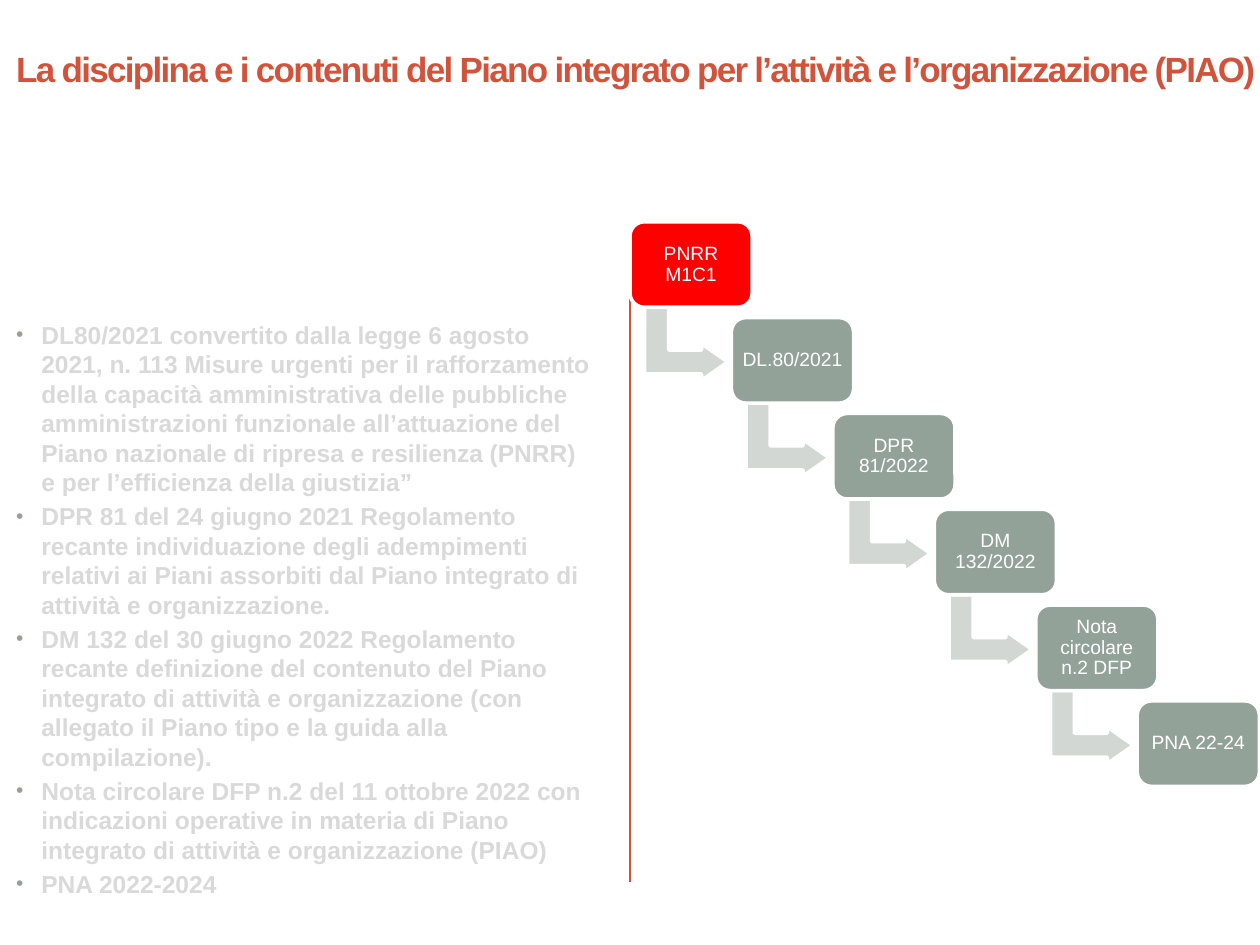
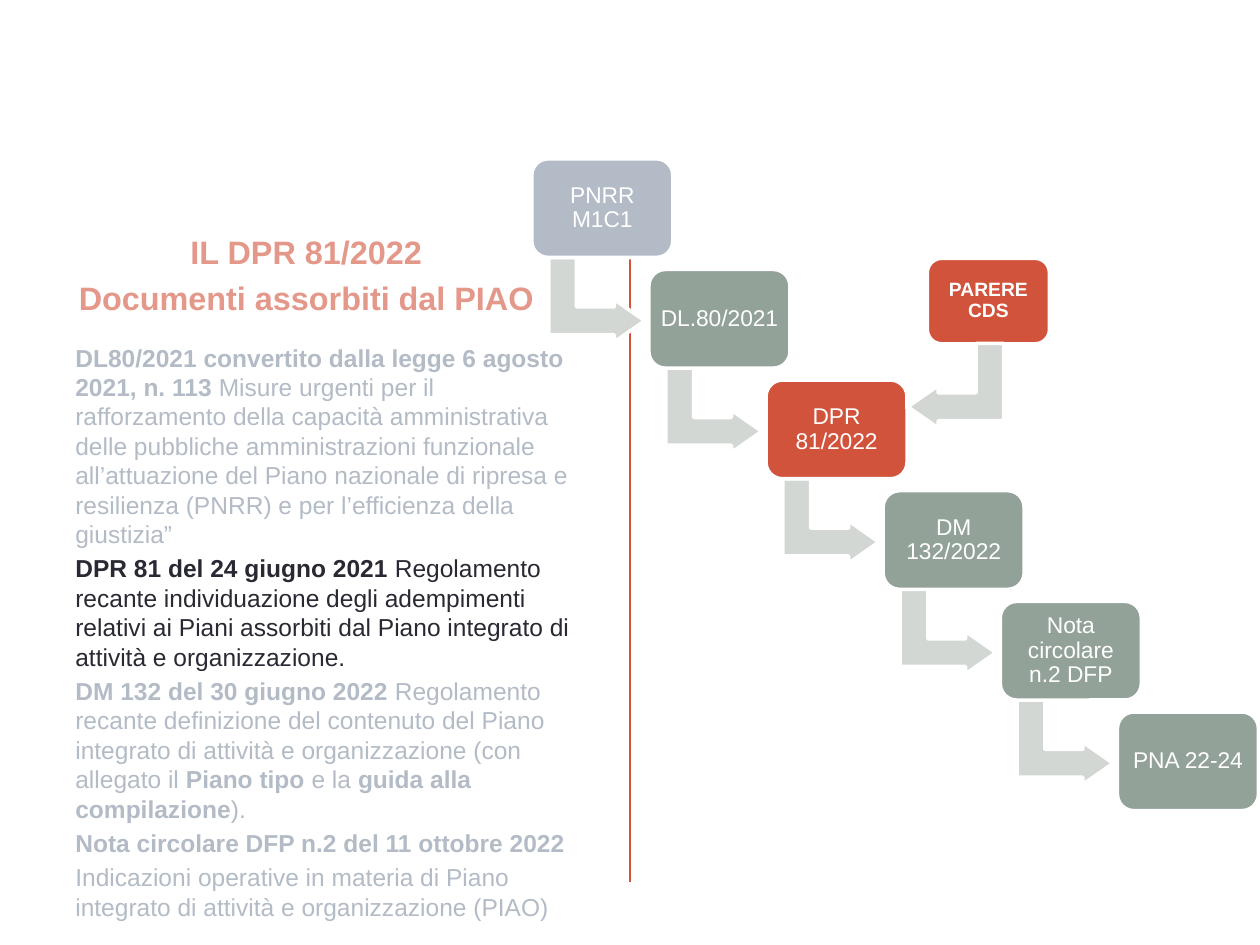
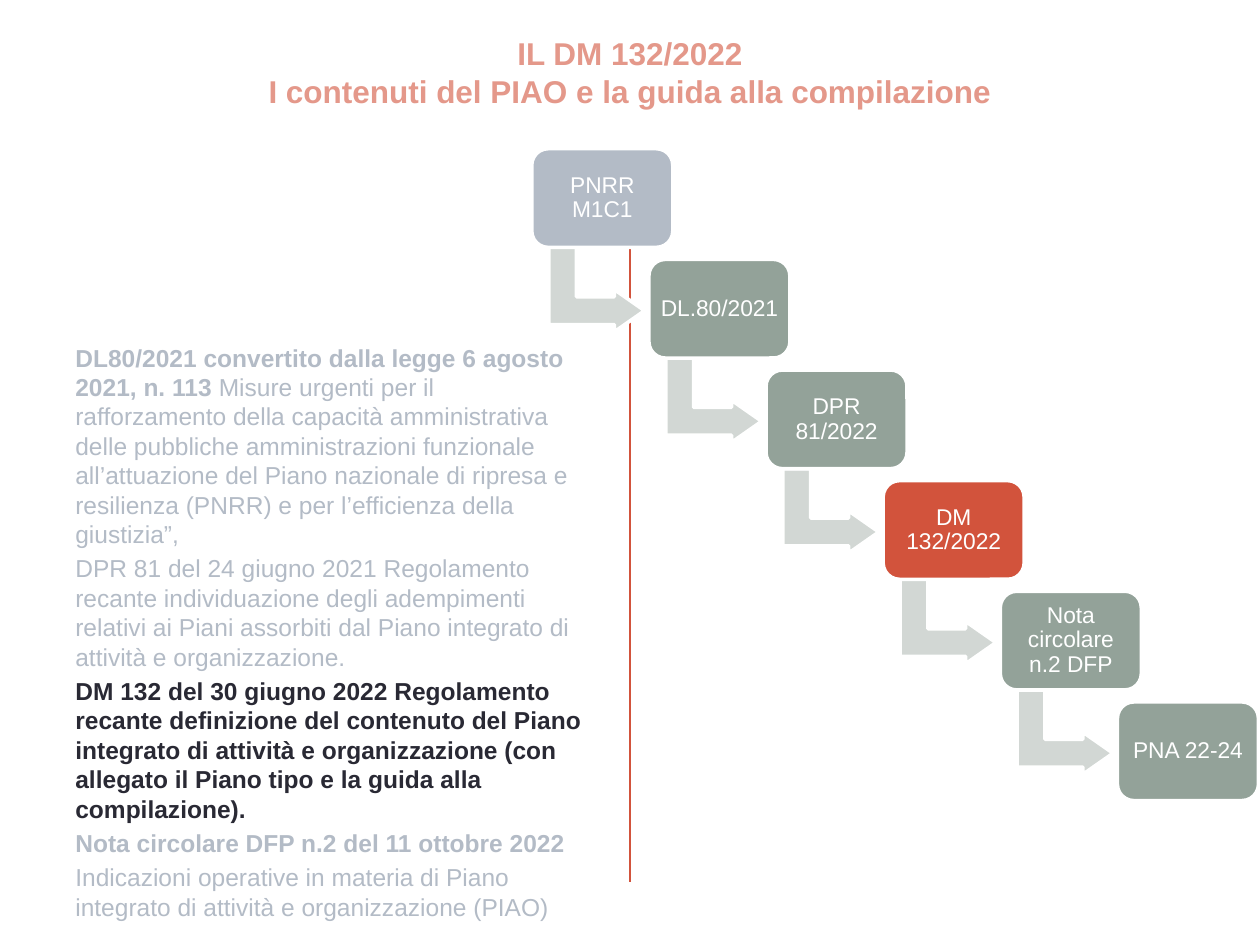
import pptx
import pptx.util
import pptx.dml.color
import pptx.enum.shapes
import pptx.enum.text
import pptx.oxml.ns
import lxml.etree

# ---------- Shared style ----------
WIDTH, HEIGHT = 10, 7.5
FONT = "Arial"
RED, SAGE, PALE_SAGE = "D2533C", "93A299", "D2D7D4"
BRIGHT_RED, SALMON = "FF0000", "E4988A"
BLUE_GREY, LIGHT_GREY, INK, WHITE = "B3BBC6", "D9D9D9", "292934", "FFFFFF"
SHAPES = pptx.enum.shapes.MSO_SHAPE
CENTER = pptx.enum.text.PP_ALIGN.CENTER
LEFT = pptx.enum.text.PP_ALIGN.LEFT
TOP = pptx.enum.text.MSO_ANCHOR.TOP
MIDDLE = pptx.enum.text.MSO_ANCHOR.MIDDLE

# ---------- Content: **...** marks bold ----------
STEPS = ["PNRR M1C1", "DL.80/2021", "DPR 81/2022", "DM 132/2022",
         "Nota circolare n.2 DFP", "PNA 22-24"]

DL_NAME = "DL80/2021 convertito dalla legge 6 agosto 2021, n. 113"
DL_SUBJECT = ("Misure urgenti per il rafforzamento della capacità amministrativa delle "
              "pubbliche amministrazioni funzionale all’attuazione del Piano nazionale di "
              "ripresa e resilienza (PNRR) e per l’efficienza della giustizia”")
DPR_NAME = "DPR 81 del 24 giugno 2021"
DPR_SUBJECT = ("Regolamento recante individuazione degli adempimenti relativi ai Piani "
               "assorbiti dal Piano integrato di attività e organizzazione.")
DM_NAME = "DM 132 del 30 giugno 2022"
DM_SUBJECT = ("Regolamento recante definizione del contenuto del Piano integrato di "
              "attività e organizzazione (con allegato il ")
NOTE_NAME = "Nota circolare DFP n.2 del 11 ottobre 2022"
NOTE_SUBJECT = "ndicazioni operative in materia di Piano integrato di attività e organizzazione (PIAO)"
DM_PLAIN = f"{DM_NAME} {DM_SUBJECT}Piano tipo e la guida alla compilazione)."

OVERVIEW = [f"**{text}**" for text in (
    f"{DL_NAME} {DL_SUBJECT}",
    f"{DPR_NAME} {DPR_SUBJECT}",
    DM_PLAIN,
    f"{NOTE_NAME} con i{NOTE_SUBJECT}",
    "PNA 2022-2024",
)]
NOTE_LINES = [f"**{NOTE_NAME}**", f"I{NOTE_SUBJECT}"]

SLIDES = [
    {"title": ["**La disciplina e i contenuti del Piano integrato per l’attività "
               "e l’organizzazione (PIAO)**"],
     "title_box": (0.03, 0, 10.2, 1.08),
     "title_format": dict(size=20, color=RED, align=LEFT, spacing=-1),
     "laws": OVERVIEW, "law_box": (0.03, 2.49, 4.78, 4.32),
     "law_format": dict(color=LIGHT_GREY, bullet=SAGE),
     "cascade": dict(left=5, top=1.76, width=0.97, size=11, colors={0: BRIGHT_RED})},
    {"title": ["**IL DPR 81/2022**", "**Documenti assorbiti dal PIAO**"],
     "title_box": (0.28, 1.83, 4.3, 0.7),
     "title_format": dict(size=18.5, color=SALMON, align=CENTER, before=0.2),
     "laws": [f"**{DL_NAME}** {DL_SUBJECT}",
              f"**{DPR_NAME}** {DPR_SUBJECT}",
              f"**{DM_NAME}** {DM_SUBJECT}**Piano tipo** e la **guida alla compilazione**).",
              *NOTE_LINES],
     "law_box": (0.5, 2.67, 4.3, 4.32),
     "law_format": dict(color=BLUE_GREY, highlight=1),
     "cascade": dict(left=4.22, top=1.26, width=1.12, size=13,
                     colors={0: BLUE_GREY, 2: RED}),
     "opinion": "**PARERE CDS**"},
    {"title": ["**IL DM 132/2022**", "**I contenuti del PIAO e la guida alla compilazione**"],
     "title_box": (0, 0.22, WIDTH, 0.7),
     "title_format": dict(size=18, color=SALMON, align=CENTER),
     "laws": [f"**{DL_NAME}** {DL_SUBJECT},",
              f"{DPR_NAME} {DPR_SUBJECT}",
              f"**{DM_PLAIN}**",
              *NOTE_LINES],
     "law_box": (0.5, 2.67, 4.3, 4.32),
     "law_format": dict(color=BLUE_GREY, highlight=2),
     "cascade": dict(left=4.22, top=1.18, width=1.12, size=13,
                     colors={0: BLUE_GREY, 3: RED})},
]


# ---------- Helpers ----------
def rgb(value):
    return pptx.dml.color.RGBColor.from_string(value)


def inches(*values):
    return [pptx.util.Inches(value) for value in values]


def add_bullet(paragraph, color):
    properties = paragraph._p.get_or_add_pPr()
    indent = pptx.util.Inches(0.2)
    properties.set("marL", str(indent))
    properties.set("indent", str(-indent))
    qn = pptx.oxml.ns.qn
    bullet_color = lxml.etree.SubElement(properties, qn("a:buClr"))
    lxml.etree.SubElement(bullet_color, qn("a:srgbClr"), val=color)
    lxml.etree.SubElement(properties, qn("a:buSzPct"), val="85000")
    lxml.etree.SubElement(properties, qn("a:buFont"), typeface=FONT)
    lxml.etree.SubElement(properties, qn("a:buChar"), char="•")


def write_text(shape, lines, size=14, color=WHITE, align=LEFT, anchor=TOP, before=0,
               line_spacing=None, spacing=None, inset=None, bullet=None, highlight=None):
    """Write one paragraph per line; before is a share of the font size."""
    frame = shape.text_frame
    frame.word_wrap = True
    frame.vertical_anchor = anchor
    if inset is not None:
        frame.margin_left = frame.margin_right = pptx.util.Inches(inset)
        frame.margin_top = frame.margin_bottom = pptx.util.Inches(inset)
    for index, line in enumerate(lines):
        paragraph = frame.add_paragraph() if index else frame.paragraphs[0]
        paragraph.alignment = align
        paragraph.space_before = pptx.util.Pt(size * before)
        if line_spacing:
            paragraph.line_spacing = line_spacing
        if bullet:
            add_bullet(paragraph, bullet)
        for part, text in enumerate(line.split("**")):
            if not text:
                continue
            run = paragraph.add_run()
            run.text = text
            run.font.name = FONT
            run.font.size = pptx.util.Pt(size)
            run.font.bold = part % 2 == 1
            run.font.color.rgb = rgb(INK if index == highlight else color)
            if spacing:
                run._r.get_or_add_rPr().set("spc", str(spacing * 100))


def add_text(slide, box, lines, **text_format):
    write_text(slide.shapes.add_textbox(*inches(*box)), lines, **text_format)


def add_block(slide, kind, box, fill, adjustments):
    shape = slide.shapes.add_shape(kind, *inches(*box))
    shape.shadow.inherit = False
    shape.fill.solid()
    shape.fill.fore_color.rgb = rgb(fill)
    shape.line.color.rgb = rgb(WHITE)
    shape.line.width = pptx.util.Pt(2.08)
    for index, value in enumerate(adjustments):
        shape.adjustments[index] = value
    return shape


def add_node(slide, text, left, top, width, fill, size):
    node = add_block(slide, SHAPES.ROUNDED_RECTANGLE, (left, top, width, width * 0.7),
                     fill, [0.167])
    write_text(node, [text], size=size, align=CENTER, anchor=MIDDLE,
               line_spacing=0.9, inset=0.04)


def add_bent_arrow(slide, left, top, node_width, rotation=90):
    box = (left, top, node_width * 0.6, node_width * 0.68)
    arrow = add_block(slide, SHAPES.BENT_UP_ARROW, box, PALE_SAGE, [0.328, 0.25, 0.358])
    arrow.rotation = rotation
    return arrow


def add_cascade(slide, left, top, width, size, colors):
    height = width * 0.7
    for index, text in enumerate(STEPS):
        x, y = left + index * width * 0.83, top + index * height * 1.12
        if index < len(STEPS) - 1:
            add_bent_arrow(slide, x + width * 0.16, y + height * 0.94, width)
        add_node(slide, text, x, y, width, colors.get(index, SAGE), size)


def add_opinion(slide, text):
    add_node(slide, text, 7.36, 2.05, 0.97, RED, 11)
    arrow = add_bent_arrow(slide, 7.25, 2.68, 1.12, rotation=270)
    arrow._element.spPr.xfrm.set("flipH", "1")


def add_divider(slide):
    line = slide.shapes.add_connector(
        pptx.enum.shapes.MSO_CONNECTOR.STRAIGHT,
        *inches(WIDTH / 2, 1.85, WIDTH / 2, 7))
    line.line.color.rgb = rgb(RED)
    line.line.width = pptx.util.Pt(1.5)
    lxml.etree.SubElement(line._element.spPr, pptx.oxml.ns.qn("a:effectLst"))


# ---------- Slides ----------
def main():
    presentation = pptx.Presentation()
    presentation.slide_width, presentation.slide_height = inches(WIDTH, HEIGHT)
    for content in SLIDES:
        slide = presentation.slides.add_slide(presentation.slide_layouts[6])
        add_divider(slide)
        add_text(slide, content["title_box"], content["title"], anchor=MIDDLE,
                 **content["title_format"])
        add_text(slide, content["law_box"], content["laws"], before=0.2,
                 **content["law_format"])
        add_cascade(slide, **content["cascade"])
        if "opinion" in content:
            add_opinion(slide, content["opinion"])
    presentation.save("out.pptx")


if __name__ == "__main__":
    main()
